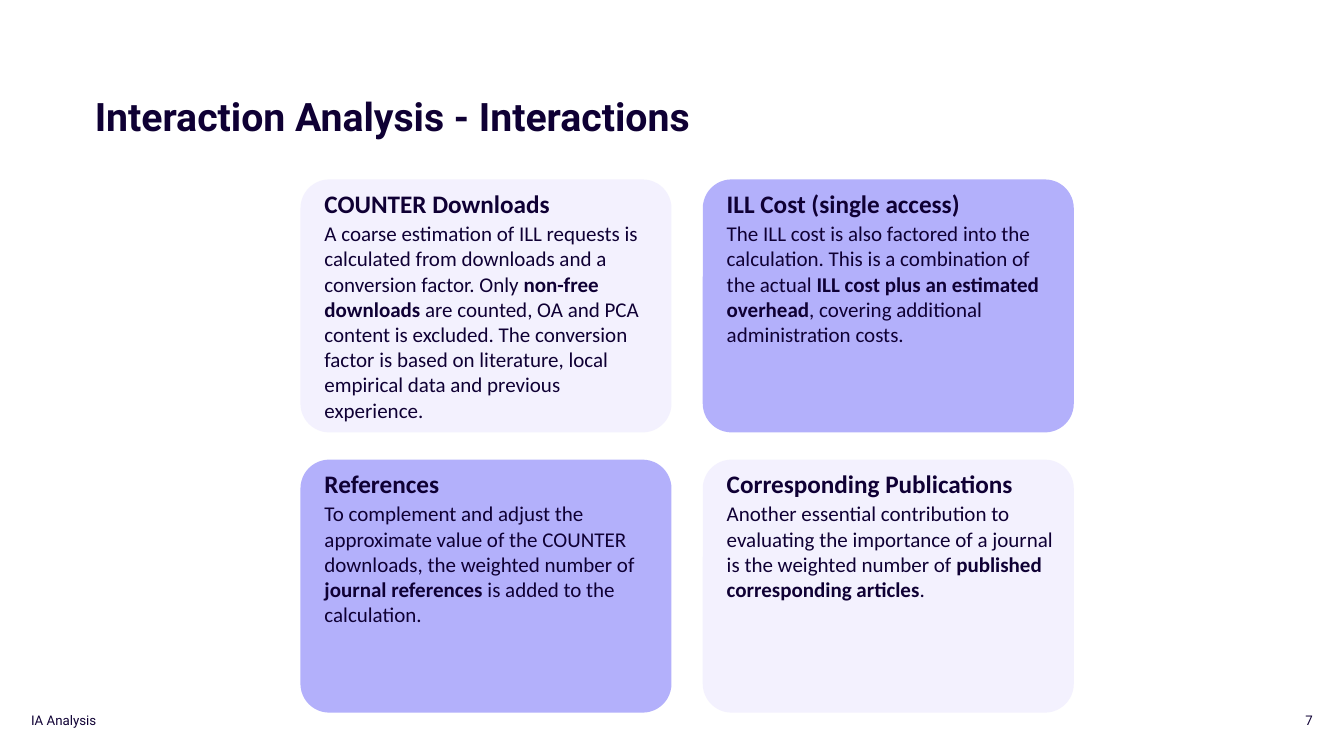
import pptx
import pptx.util
import pptx.dml.color
import pptx.enum.shapes
import pptx.enum.text

Inches = pptx.util.Inches
RGB = pptx.dml.color.RGBColor
ALIGN = pptx.enum.text.PP_ALIGN
ANCHOR = pptx.enum.text.MSO_ANCHOR

INK = RGB(0x0F, 0x00, 0x34)
PALE = RGB(0xF3, 0xF1, 0xFE)
LILAC = RGB(0xB3, 0xB0, 0xFB)
WHITE = RGB(0xFF, 0xFF, 0xFF)

# Heading, then body text before, in and after the bold part
CARDS = [
    ("COUNTER Downloads",
     ("A coarse estimation of ILL requests is calculated from downloads and a "
      "conversion factor. Only ",
      "non-free downloads",
      " are counted, OA and PCA content is excluded. The conversion factor is "
      "based on literature, local empirical data and previous experience.")),
    ("ILL Cost (single access)",
     ("The ILL cost is also factored into the calculation. This is a "
      "combination of the actual ",
      "ILL cost plus an estimated overhead",
      ", covering additional administration costs.")),
    ("References",
     ("To complement and adjust the approximate value of the COUNTER "
      "downloads, the weighted number of ",
      "journal references",
      " is added to the calculation.")),
    ("Corresponding Publications",
     ("Another essential contribution to evaluating the importance of a "
      "journal is the weighted number of ",
      "published corresponding articles",
      ".")),
]


def style(run, face, size, bold=False):
    run.font.name = face
    run.font.size = pptx.util.Pt(size)
    run.font.bold = bold
    run.font.color.rgb = INK


def add_text(slide, box, text, face, size, bold=False):
    label = slide.shapes.add_textbox(*map(Inches, box))
    frame = label.text_frame
    frame.word_wrap = True
    frame.text = text
    style(frame.paragraphs[0].runs[0], face, size, bold)
    return frame


def add_title(slide, box, text):
    title = slide.shapes.title
    title.left, title.top, title.width, title.height = map(Inches, box)
    frame = title.text_frame
    frame.text = text
    frame.word_wrap = True
    frame.auto_size = pptx.enum.text.MSO_AUTO_SIZE.NONE
    frame.vertical_anchor = ANCHOR.BOTTOM
    line = frame.paragraphs[0]
    line.alignment = ALIGN.LEFT
    line.line_spacing = 0.9
    style(line.runs[0], "Roboto", 28, True)


def add_card(slide, box, fill, head, body):
    left, top, width, height = box
    # Panel
    panel = slide.shapes.add_shape(
        pptx.enum.shapes.MSO_SHAPE.ROUNDED_RECTANGLE, *map(Inches, box))
    panel.adjustments[0] = 0.114
    panel.shadow.inherit = False
    panel.fill.solid()
    panel.fill.fore_color.rgb = fill
    panel.line.fill.background()

    # Body with a bold middle part
    inner = width - 0.21
    start, strong, end = body
    frame = add_text(slide, (left + 0.14, top + 0.36, inner, height - 0.39),
                     start, "Calibri", 15)
    for text, bold in ((strong, True), (end, False)):
        run = frame.paragraphs[0].add_run()
        run.text = text
        style(run, "Calibri", 15, bold)

    # Heading
    add_text(slide, (left + 0.14, top + 0.04, inner, 0.4),
             head, "Calibri", 18, True)


def add_grid(slide, box):
    left, top, width, height = box
    wide, high = 3.68, 2.51
    for i, (head, body) in enumerate(CARDS):
        row, col = divmod(i, 2)
        spot = (left + col * (width - wide), top + row * (height - high),
                wide, high)
        add_card(slide, spot, (PALE, LILAC)[(row + col) % 2], head, body)


def add_foot(slide, box, name, page):
    left, top, width, height = box
    parts = ((name, left, 2.17, ALIGN.LEFT),
             (page, left + width - 3, 3, ALIGN.RIGHT))
    for text, x, wide, align in parts:
        frame = add_text(slide, (x, top, wide, height), text, "Roboto", 9.5)
        frame.vertical_anchor = ANCHOR.MIDDLE
        frame.paragraphs[0].alignment = align


def main():
    deck = pptx.Presentation()
    deck.slide_width, deck.slide_height = Inches(13.33), Inches(7.5)
    slide = deck.slides.add_slide(deck.slide_layouts[5])
    slide.background.fill.solid()
    slide.background.fill.fore_color.rgb = WHITE

    add_title(slide, (0.84, 0.57, 6.54, 0.87),
              "Interaction Analysis - Interactions")
    add_grid(slide, (2.98, 1.78, 7.67, 5.29))
    add_foot(slide, (0.21, 6.95, 12.91, 0.4), "IA Analysis", "7")
    deck.save("out.pptx")


if __name__ == "__main__":
    main()
